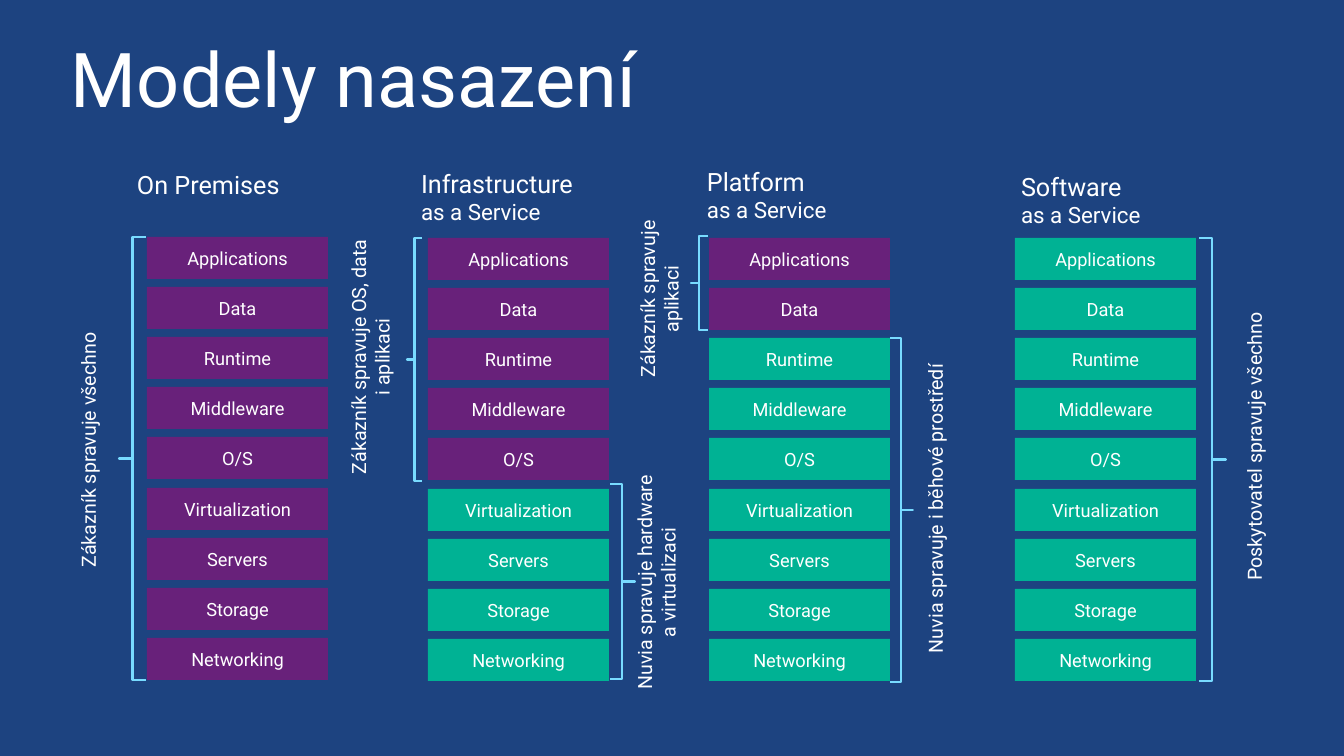
import pptx
import pptx.dml.color
import pptx.enum.shapes
import pptx.enum.text
import pptx.util

PX = 914400 / 100.8
FONT = "Roboto"
COLORS = {
    "background": "1D4380",
    "customer": "68217A",
    "provider": "00B294",
    "bracket": "78DBFF",
    "text": "FFFFFF",
}
LAYERS = ["Applications", "Data", "Runtime", "Middleware", "O/S",
          "Virtualization", "Servers", "Storage", "Networking"]
CELL_H = 42
LABEL_LINE = 24

# Brackets: box, opens to the right, label left / top / length, label lines.
# All offsets are from the top left corner of the column's stack.
MODELS = [
    {"box": (147, 237, 181, 443), "heading": ["On Premises"], "heading_at": (-10, -68),
     "customer_layers": 9,
     "brackets": [((-28, 0, 27, 443), True, (-71, 92, 242), ["Zákazník spravuje všechno"])]},
    {"box": (428, 238, 181, 443), "heading": ["Infrastructure", "as a Service"],
     "heading_at": (-7, -70), "customer_layers": 5,
     "brackets": [((-21, 0, 15, 243), True, (-82, -3, 244),
                   ["Zákazník spravuje OS, data", "i aplikaci"]),
                  ((182, 246, 25, 195), False, (204, 232, 225),
                   ["Nuvia spravuje hardware", "a virtualizaci"])]},
    {"box": (709, 238, 181, 443), "heading": ["Platform", "as a Service"],
     "heading_at": (-2, -72), "customer_layers": 2,
     "brackets": [((-18, -2, 17, 94), True, (-74, -24, 170),
                   ["Zákazník spravuje", "aplikaci"]),
                  ((181, 100, 23, 344), False, (214, 119, 303),
                   ["Nuvia spravuje i běhové prostředí"])]},
    {"box": (1015, 238, 181, 443), "heading": ["Software", "as a Service"],
     "heading_at": (6, -67), "customer_layers": 0,
     "brackets": [((184, 0, 27, 443), False, (227, 71, 275),
                   ["Poskytovatel spravuje všechno"])]},
]


def px(*lengths):
    return [pptx.util.Emu(round(n * PX)) for n in lengths]


def rgb(name):
    return pptx.dml.color.RGBColor.from_string(COLORS[name])


def write(tf, lines, sizes, align, anchor):
    """Fill a text frame with one paragraph per line, without insets."""
    tf.word_wrap = True
    tf.vertical_anchor = anchor
    tf.margin_left = tf.margin_right = tf.margin_top = tf.margin_bottom = 0
    for i, (line, size) in enumerate(zip(lines, sizes)):
        p = tf.add_paragraph() if i else tf.paragraphs[0]
        p.alignment = align
        r = p.add_run()
        r.text = line
        r.font.name = FONT
        r.font.size = pptx.util.Pt(size)
        r.font.color.rgb = rgb("text")


def add_title(slide, box, text):
    sp = slide.shapes.title
    sp.left, sp.top, sp.width, sp.height = px(*box)
    tf = sp.text_frame
    write(tf, [text], [54], pptx.enum.text.PP_ALIGN.LEFT, pptx.enum.text.MSO_ANCHOR.TOP)
    tf.margin_left, tf.margin_top = px(10, 5)
    tf.paragraphs[0].line_spacing = 0.9


def add_heading(slide, box, lines):
    sp = slide.shapes.add_textbox(*px(*box))
    write(sp.text_frame, lines, [18, 16], pptx.enum.text.PP_ALIGN.LEFT,
          pptx.enum.text.MSO_ANCHOR.TOP)


def add_stack(slide, box, customer_layers):
    x, y, w, h = box
    step = (h - CELL_H) / (len(LAYERS) - 1)
    for i, layer in enumerate(LAYERS):
        sp = slide.shapes.add_shape(pptx.enum.shapes.MSO_SHAPE.RECTANGLE,
                                    *px(x, y + round(i * step), w, CELL_H))
        sp.shadow.inherit = False
        sp.fill.solid()
        sp.fill.fore_color.rgb = rgb("customer" if i < customer_layers else "provider")
        sp.line.fill.background()
        write(sp.text_frame, [layer], [13], pptx.enum.text.PP_ALIGN.CENTER,
              pptx.enum.text.MSO_ANCHOR.MIDDLE)


def add_bracket(slide, box, opens_right):
    sp = slide.shapes.add_shape(pptx.enum.shapes.MSO_SHAPE.LEFT_BRACE, *px(*box))
    sp.shadow.inherit = False
    sp.adjustments[0] = 0
    sp.adjustments[1] = 0.5
    sp.fill.background()
    sp.line.color.rgb = rgb("bracket")
    sp.line.width = pptx.util.Pt(1.5)
    if not opens_right:
        sp._element.spPr.xfrm.set("flipH", "1")


def add_vertical_label(slide, box, lines):
    """Add text that reads from bottom to top."""
    sp = slide.shapes.add_textbox(*px(*box))
    write(sp.text_frame, lines, [14] * len(lines), pptx.enum.text.PP_ALIGN.CENTER,
          pptx.enum.text.MSO_ANCHOR.MIDDLE)
    sp.text_frame._txBody.bodyPr.set("vert", "vert270")


def add_model(slide, model):
    x, y, w, _ = model["box"]
    dx, dy = model["heading_at"]
    add_heading(slide, (x + dx, y + dy, w + 40, 60), model["heading"])
    add_stack(slide, model["box"], model["customer_layers"])
    for (bx, by, bw, bh), opens_right, (lx, ly, length), lines in model["brackets"]:
        add_bracket(slide, (x + bx, y + by, bw, bh), opens_right)
        add_vertical_label(slide, (x + lx, y + ly, LABEL_LINE * len(lines), length), lines)


def main():
    prs = pptx.Presentation()
    prs.slide_width, prs.slide_height = px(1344, 756)
    slide = prs.slides.add_slide(prs.slide_layouts[5])
    slide.background.fill.solid()
    slide.background.fill.fore_color.rgb = rgb("background")
    add_title(slide, (61, 37, 1222, 106), "Modely nasazení")
    for model in MODELS:
        add_model(slide, model)
    prs.save("out.pptx")


if __name__ == "__main__":
    main()
